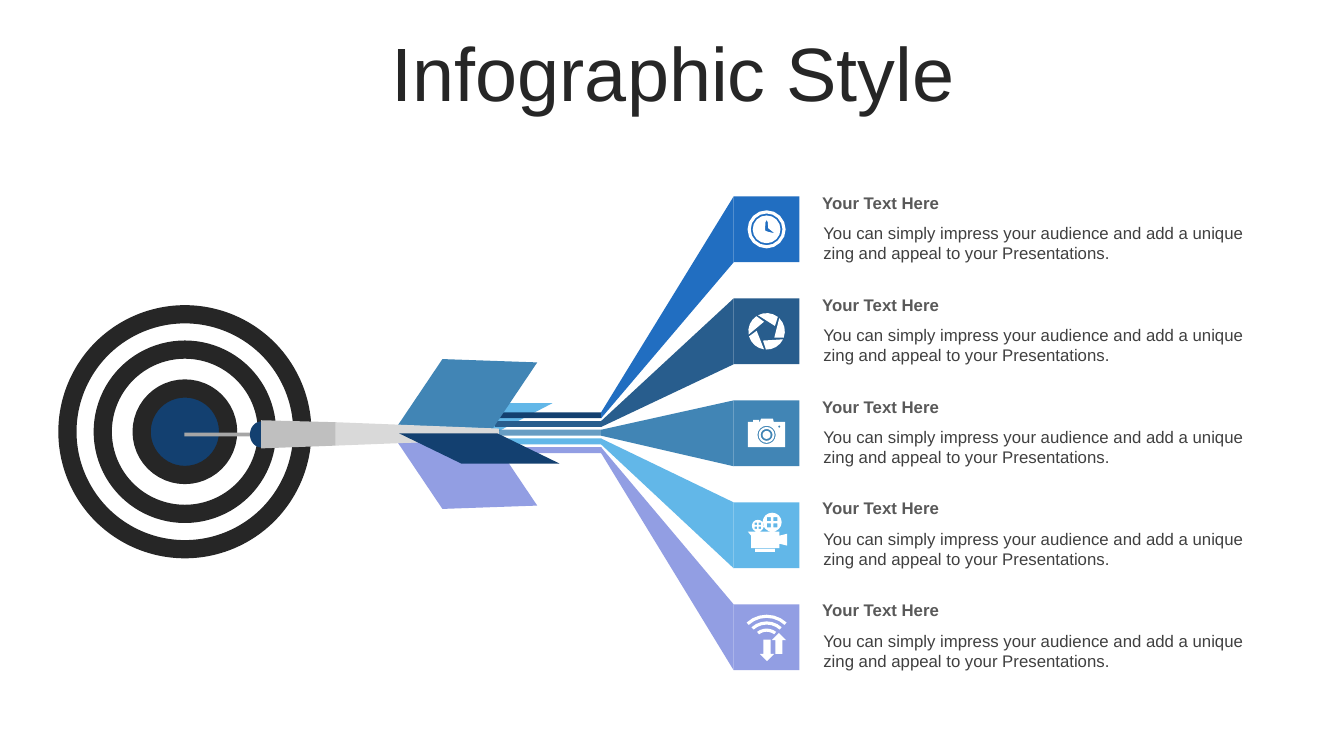
from math import cos, radians, sin

from lxml import etree
from pptx import Presentation
from pptx.dml.color import RGBColor
from pptx.enum.shapes import MSO_SHAPE
from pptx.enum.text import MSO_ANCHOR, MSO_AUTO_SIZE, PP_ALIGN
from pptx.oxml.ns import qn
from pptx.util import Cm, Pt

RECTANGLE = MSO_SHAPE.RECTANGLE
OVAL = MSO_SHAPE.OVAL
CHORD = MSO_SHAPE.CHORD
PARALLELOGRAM = MSO_SHAPE.PARALLELOGRAM
CENTER = PP_ALIGN.CENTER
MIDDLE = MSO_ANCHOR.MIDDLE
NO_AUTOFIT = MSO_AUTO_SIZE.NONE

WHITE, BLACK, NAVY = "FFFFFF", "262626", "134070"
BLUE, STEEL, TEAL, SKY, LILAC = "216EC1", "285D8D", "4185B5", "62B7E8", "929EE3"
HEADING = "Your Text Here"
BODY = ("You can simply impress your audience and add a unique "
        "zing and appeal to your Presentations.")


def color(hex_string):
    return RGBColor.from_string(hex_string)


# Outlines in cm, as lists of points
def polar(x, y, radius, angle):
    return x + radius * cos(radians(angle)), y + radius * sin(radians(angle))


def arc(x, y, radius, start, end, steps=6):
    return [polar(x, y, radius, start + (end - start) * i / steps) for i in range(steps + 1)]


def circle(x, y, radius):
    steps = 6 if radius < 0.1 else 16
    return arc(x, y, radius, 0, 360, steps)[:-1]


def box(left, top, right, bottom):
    return [(left, top), (right, top), (right, bottom), (left, bottom)]


def arrow(x, tip, tail):
    shoulder = tip + (0.18 if tail > tip else -0.18)
    return [(x, tip), (x + 0.18, shoulder), (x + 0.09, shoulder), (x + 0.09, tail),
            (x - 0.09, tail), (x - 0.09, shoulder), (x - 0.18, shoulder)]


# Icons around their own centre; an outline inside another is a hole
def clock_icon():
    hands = [(-0.04, 0.03), (-0.03, -0.18), (0, -0.24), (0.03, -0.18),
             (0.04, -0.03), (0.2, 0.1), (0.03, 0.06)]
    return [circle(0, 0, radius) for radius in (0.48, 0.4, 0.35)] + [hands]


def aperture_icon():
    return [arc(0, 0, 0.46, turn + 26, turn + 92, 4) + [polar(0, 0, 0.25, turn + 111)]
            for turn in range(0, 360, 72)]


def camera_icon():
    body = [(-0.47, -0.29), (-0.34, -0.29), (-0.34, -0.34), (-0.19, -0.34), (-0.19, -0.29),
            (-0.17, -0.29), (-0.14, -0.37), (0.16, -0.37), (0.18, -0.29),
            (0.47, -0.29), (0.47, 0.35), (-0.47, 0.35)]
    lens = [circle(0, 0.04, radius) for radius in (0.23, 0.2, 0.15, 0.1)]
    return [body, circle(0.32, -0.17, 0.03)] + lens


def film_icon():
    body = [(-0.47, -0.09), (0.32, -0.09), (0.32, 0.01), (0.52, -0.04),
            (0.52, 0.26), (0.32, 0.21), (0.32, 0.32), (-0.39, 0.32), (-0.39, 0.01)]
    contours = [body, box(-0.29, 0.34, 0.21, 0.42)]
    for x, y, radius, offset, hole in ((0.14, -0.33, 0.24, 0.08, 0.05),
                                       (-0.22, -0.24, 0.15, 0.05, 0.03)):
        contours.append(circle(x, y, radius))
        contours += [box(x + dx - hole, y + dy - hole, x + dx + hole, y + dy + hole)
                     for dx in (-offset, offset) for dy in (-offset, offset)]
    return contours


def wifi_icon():
    waves = [arc(0, 0.17, radius, 270 - half, 270 + half)
             + arc(0, 0.17, radius - 0.08, 270 + half, 270 - half)
             for radius, half in ((0.74, 43), (0.57, 42), (0.39, 38))]
    return waves + [arrow(0.01, 0.6, 0.06), arrow(0.31, -0.11, 0.42)]


class InfographicSlide:
    font = "Arial"

    def __init__(self, presentation):
        self.slide = presentation.slides.add_slide(presentation.slide_layouts[5])
        self.shapes = self.slide.shapes

    def format_text(self, shape, text, size, hex_color, bold=False):
        shape.text_frame.text = text
        shape.text_frame.word_wrap = True
        font = shape.text_frame.paragraphs[0].runs[0].font
        font.name, font.size, font.bold = self.font, Pt(size), bold
        font.color.rgb = color(hex_color)

    def title(self, text):
        title = self.shapes.title
        title.left, title.top, title.width, title.height = Cm(0.89), Cm(0.94), Cm(32.16), Cm(2.01)
        self.format_text(title, text, 54, BLACK)
        title.text_frame.auto_size = NO_AUTOFIT
        title.text_frame.vertical_anchor = MIDDLE
        paragraph = title.text_frame.paragraphs[0]
        paragraph.alignment = CENTER
        paragraph.line_spacing = 0.9
        paragraph.space_before = Pt(10)

    def text(self, text, left, top, width, height, hex_color, bold=False):
        shape = self.shapes.add_textbox(Cm(left), Cm(top), Cm(width), Cm(height))
        self.format_text(shape, text, 12, hex_color, bold)

    def paint(self, shape, fill):
        shape.shadow.inherit = False
        shape.fill.solid()
        shape.fill.fore_color.rgb = color(fill)
        shape.line.fill.background()
        return shape

    def preset(self, kind, left, top, width, height, fill, adjustments=(), rotation=0, flip=False):
        shape = self.shapes.add_shape(kind, Cm(left), Cm(top), Cm(width), Cm(height))
        for index, value in enumerate(adjustments):
            shape.adjustments[index] = value
        shape.rotation = rotation
        if flip:
            shape.element.spPr.xfrm.set("flipH", "1")
        return self.paint(shape, fill)

    def ring(self, x, y, diameter, fill):
        shape = self.preset(OVAL, x - diameter / 2, y - diameter / 2, diameter, diameter, fill)
        shape.line.color.rgb = color(BLACK)
        shape.line.width = Pt(13)

    def outline(self, contours, fill, x=0, y=0):
        placed = [[(Cm(x + px), Cm(y + py)) for px, py in points] for points in contours]
        builder = self.shapes.build_freeform(*placed[0][0], scale=1.0)
        for index, points in enumerate(placed):
            if index:
                builder.move_to(*points[0])
            builder.add_line_segments(points[1:], close=True)
        self.paint(builder.convert_to_shape(), fill)


def set_opacity(shape, percent):
    fill_color = shape.element.spPr.find(qn("a:solidFill"))[0]
    etree.SubElement(fill_color, qn("a:alpha")).set("val", str(percent * 1000))


def main():
    presentation = Presentation()
    presentation.slide_width, presentation.slide_height = Cm(33.87), Cm(19.05)
    page = InfographicSlide(presentation)
    page.title("Infographic Style")

    # Target
    for diameter, fill in ((5.92, WHITE), (4.14, WHITE), (2.18, NAVY)):
        page.ring(4.66, 10.88, diameter, fill)

    # Five branches: stripe, beam, square, icon and text
    page.preset(PARALLELOGRAM, 10.03, 10.16, 3.89, 0.76, SKY, [1.922], 180)
    branches = ((NAVY, BLUE, clock_icon), (STEEL, STEEL, aperture_icon), (TEAL, TEAL, camera_icon),
                (SKY, SKY, film_icon), (LILAC, LILAC, wifi_icon))
    square_left, side, beam_left, stripe_height = 18.49, 1.66, 15.15, 0.15
    for row, (stripe_fill, fill, icon) in enumerate(branches):
        top = 4.95 + 2.57 * row
        stripe_top = 10.39 + 0.22 * row
        stripe = page.preset(RECTANGLE, 12.47, stripe_top, 2.69, stripe_height, stripe_fill)
        if row == 2:
            set_opacity(stripe, 80)
        page.preset(RECTANGLE, square_left, top, side, side, fill)
        page.outline([[(beam_left, stripe_top), (square_left, top), (square_left, top + side),
                       (beam_left, stripe_top + stripe_height)]], fill)
        page.outline(icon(), WHITE, square_left + side / 2, top + side / 2)
        page.text(HEADING, 20.47, top - 0.23, 11.18, 0.76, "595959", True)
        page.text(BODY, 20.5, top + 0.53, 11.28, 1.27, "404040")

    # Dart
    page.preset(RECTANGLE, 4.65, 10.9, 2.03, 0.1, "A6A6A6")
    page.preset(PARALLELOGRAM, 10.06, 11.1, 3.45, 1.7, LILAC, [0.623], 178, True)
    page.preset(PARALLELOGRAM, 10.06, 9.07, 3.45, 1.7, TEAL, [0.623], 182)
    page.outline([[(8.46, 10.64), (12.57, 10.8), (12.57, 11.07), (8.46, 11.23)]], "D9D9D9")
    page.preset(CHORD, 6.3, 10.62, 0.58, 0.66, NAVY, [53.912, 162])
    page.outline([[(6.58, 10.59), (8.46, 10.64), (8.46, 11.23), (6.58, 11.3)]], "BFBFBF")
    page.preset(PARALLELOGRAM, 10.06, 10.92, 4.04, 0.76, NAVY, [2.059], 180, True)

    presentation.save("out.pptx")


if __name__ == "__main__":
    main()
